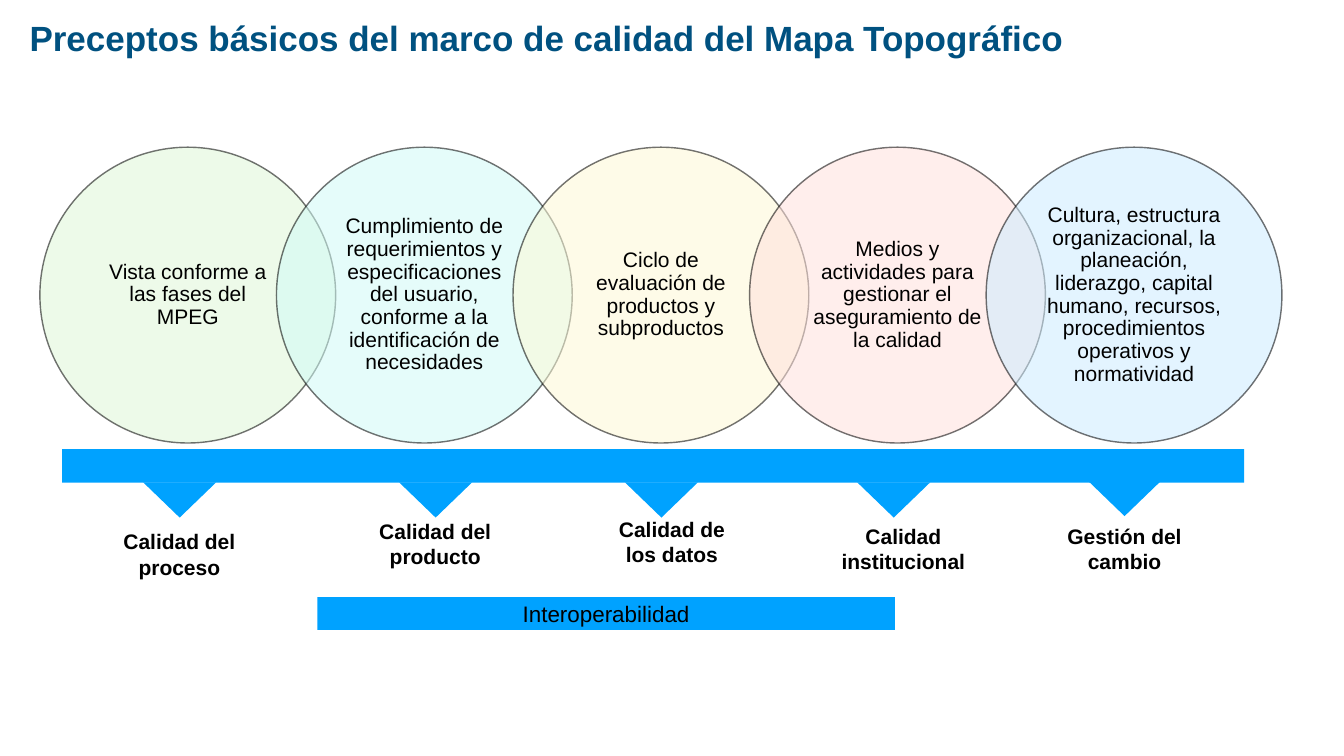
from dataclasses import dataclass

from lxml import etree
from pptx import Presentation
from pptx.dml.color import RGBColor
from pptx.enum.shapes import MSO_SHAPE
from pptx.enum.text import MSO_ANCHOR, MSO_AUTO_SIZE, PP_ALIGN
from pptx.oxml.ns import qn
from pptx.util import Pt

ELLIPSE = MSO_SHAPE.OVAL
TRIANGLE = MSO_SHAPE.ISOSCELES_TRIANGLE
RECTANGLE = MSO_SHAPE.RECTANGLE
MIDDLE, TOP = MSO_ANCHOR.MIDDLE, MSO_ANCHOR.TOP
LEFT, CENTER = PP_ALIGN.LEFT, PP_ALIGN.CENTER
TITLE_ONLY = 5


@dataclass(frozen=True)
class Theme:
    font: str = "Arial"
    title_color: str = "005180"
    text_color: str = "000000"
    accent: str = "00A2FF"
    title_size: int = 50
    body_size: int = 30
    bar_size: int = 32
    circle_opacity: int = 54


THEME = Theme()

TITLE = "Preceptos básicos del marco de calidad del Mapa Topográfico"
CIRCLES = [
    ("Vista conforme a las fases del MPEG", "DFF7D7"),
    ("Cumplimiento de requerimientos y especificaciones del usuario, "
     "conforme a la identificación de necesidades", "D0FBF6"),
    ("Ciclo de evaluación de productos y subproductos", "FEF9D6"),
    ("Medios y actividades para gestionar el aseguramiento de la calidad", "FFE0DC"),
    ("Cultura, estructura organizacional, la planeación, liderazgo, capital "
     "humano, recursos, procedimientos operativos y normatividad", "CCECFF"),
]
CIRCLE_LEFT, CIRCLE_TOP, CIRCLE_SIZE, CIRCLE_PITCH = 57, 210.3, 422.6, 338

# Label, its left, top and width, then the left and top of its pointer
QUALITIES = [
    ("Calidad del proceso", 161.3, 751.7, 190, 204.5, 689),
    ("Calidad del producto", 521.3, 736.6, 201, 570.2, 689),
    ("Calidad de los datos", 874.8, 733.7, 170.6, 892.8, 689),
    ("Calidad institucional", 1190.2, 743.8, 201, 1224.7, 689),
    ("Gestión del cambio", 1506.2, 743.8, 201, 1554.5, 686.9),
]
LABEL_HEIGHT = 80
POINTER_SIZE = (104.4, 50.4)


def write_text(shape, text, size, color=THEME.text_color, bold=False, align=CENTER,
               anchor=MIDDLE, margins=(4, 4), line_spacing=None):
    """Fill the shape with one paragraph; margins are horizontal and vertical."""
    frame = shape.text_frame
    horizontal, vertical = (Pt(margin) for margin in margins)
    frame_format = {
        "text": text, "word_wrap": True, "auto_size": MSO_AUTO_SIZE.NONE,
        "vertical_anchor": anchor, "margin_left": horizontal,
        "margin_right": horizontal, "margin_top": vertical, "margin_bottom": vertical,
    }
    for name, value in frame_format.items():
        setattr(frame, name, value)
    paragraph = frame.paragraphs[0]
    paragraph.alignment = align
    paragraph.line_spacing = line_spacing
    font = paragraph.runs[0].font
    for name, value in {"name": THEME.font, "size": Pt(size), "bold": bold}.items():
        setattr(font, name, value)
    font.color.rgb = RGBColor.from_string(color)


def add_filled(page, kind, left, top, width, height, color=THEME.accent):
    shape = page.shapes.add_shape(kind, Pt(left), Pt(top), Pt(width), Pt(height))
    shape.shadow.inherit = False
    shape.fill.solid()
    shape.fill.fore_color.rgb = RGBColor.from_string(color)
    shape.line.fill.background()
    return shape


def add_title(page):
    title = page.shapes.title
    position = {"left": 38.2, "top": 17.3, "width": 1531.4, "height": 73.4}
    for name, value in position.items():
        setattr(title, name, Pt(value))
    write_text(title, TITLE, THEME.title_size, THEME.title_color, bold=True, align=LEFT)


def add_circle(page, left, text, color):
    circle = add_filled(page, ELLIPSE, left, CIRCLE_TOP, CIRCLE_SIZE, CIRCLE_SIZE, color)
    circle.line.color.rgb = RGBColor.from_string(THEME.text_color)
    circle.line.width = Pt(2)
    for tint in circle._element.spPr.iter(qn("a:srgbClr")):
        etree.SubElement(tint, qn("a:alpha"), val=str(THEME.circle_opacity * 1000))
    write_text(circle, text, THEME.body_size, margins=(23, 3), line_spacing=0.9)


def add_quality(page, text, left, top, width, pointer_left, pointer_top):
    label = page.shapes.add_textbox(Pt(left), Pt(top), Pt(width), Pt(LABEL_HEIGHT))
    write_text(label, text, THEME.body_size, bold=True, anchor=TOP)
    pointer = add_filled(page, TRIANGLE, pointer_left, pointer_top, *POINTER_SIZE)
    pointer.rotation = 180


def main():
    deck = Presentation()
    deck.slide_width, deck.slide_height = Pt(1920.24), Pt(1080)
    page = deck.slides.add_slide(deck.slide_layouts[TITLE_ONLY])
    add_title(page)
    for index, (text, color) in enumerate(CIRCLES):
        add_circle(page, CIRCLE_LEFT + index * CIRCLE_PITCH, text, color)
    for quality in QUALITIES:
        add_quality(page, *quality)
    add_filled(page, RECTANGLE, 88.6, 641.5, 1689, 48.2)
    interoperability = add_filled(page, RECTANGLE, 453.6, 853.2, 825, 46.8)
    write_text(interoperability, "Interoperabilidad", THEME.bar_size)
    deck.save("out.pptx")


if __name__ == "__main__":
    main()
